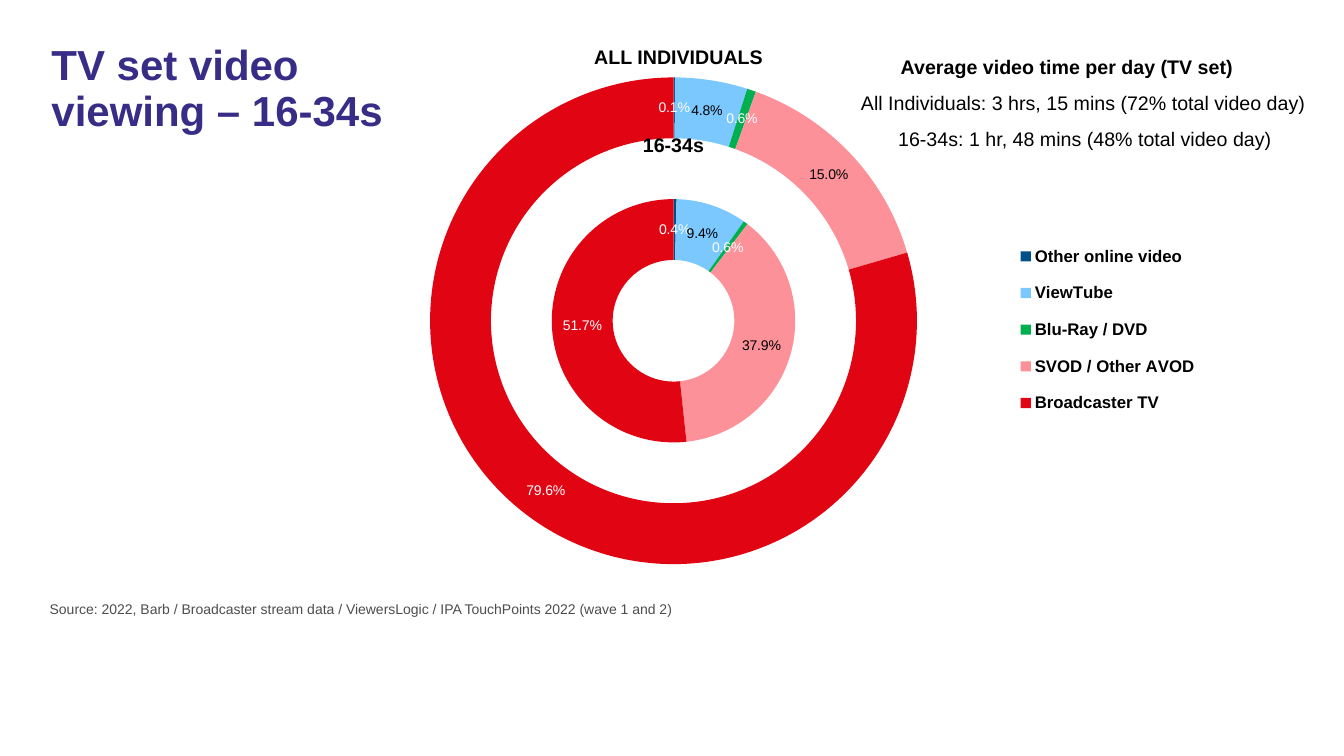
from dataclasses import dataclass
from typing import NamedTuple

from lxml import etree
from pptx import Presentation
from pptx import util as u
from pptx.chart import data as chart_data
from pptx.dml.color import RGBColor
from pptx.enum import chart as charts
from pptx.enum import text
from pptx.oxml import ns

BLACK = RGBColor(0x00, 0x00, 0x00)
WHITE = RGBColor(0xFF, 0xFF, 0xFF)
GREY = RGBColor(0x4D, 0x4D, 0x4D)
PURPLE = RGBColor(0x37, 0x2D, 0x87)
NAVY = RGBColor(0x00, 0x4F, 0x87)
SKY = RGBColor(0x7B, 0xC8, 0xFF)
GREEN = RGBColor(0x00, 0xB0, 0x50)
PINK = RGBColor(0xFD, 0x91, 0x99)
RED = RGBColor(0xE1, 0x05, 0x14)

FONT = "Arial"
VALUE_FORMAT = '0.0"%"'
PAGE_WIDTH = u.Inches(13.33)
PAGE_HEIGHT = u.Inches(7.5)
GRID_STEPS = 100
CAPTION_ROWS = 4.53


class Area(NamedTuple):
    column: float
    row: float
    columns: float
    rows: float

    def lengths(self) -> tuple[int, int, int, int]:
        across, down = PAGE_WIDTH / GRID_STEPS, PAGE_HEIGHT / GRID_STEPS
        return (round(self.column * across), round(self.row * down),
                round(self.columns * across), round(self.rows * down))


class Category(NamedTuple):
    name: str
    fill: RGBColor
    label: RGBColor


class Ring(NamedTuple):
    name: str
    values: tuple


@dataclass
class Caption:
    words: str
    area: Area
    size: float = 14
    bold: bool = False
    color: RGBColor = BLACK
    align: text.PP_ALIGN = text.PP_ALIGN.LEFT
    line_spacing: float = 1.0


CATEGORIES = (
    Category("Other online video", NAVY, WHITE),
    Category("ViewTube", SKY, BLACK),
    Category("Blu-Ray / DVD", GREEN, WHITE),
    Category("SVOD / Other AVOD", PINK, BLACK),
    Category("Broadcaster TV", RED, WHITE),
)
RINGS = (
    Ring("Series 1", (0.4, 9.4, 0.6, 37.9, 51.7)),
    Ring("Series 2", (None,) * len(CATEGORIES)),
    Ring("Series 3", (0.1, 4.8, 0.6, 15, 79.6)),
)
CHART_AREA = Area(24.08, 1.87, 72.02, 81.07)
PLOT_AREA = Area(11, 9.5, 50.3, 81.1)
LEGEND_AREA = Area(71, 35, 20, 33)

TITLE = Caption("TV set video viewing – 16-34s", Area(3.08, 5.2, 28.66, 36.8),
                size=30, bold=True, color=PURPLE, line_spacing=0.9)
CAPTIONS = (
    Caption("All Individuals: 3 hrs, 15 mins (72% total video day)",
            Area(63.32, 11.33, 36.68, CAPTION_ROWS)),
    Caption("16-34s: 1 hr, 48 mins (48% total video day)",
            Area(66.09, 16.07, 31.43, CAPTION_ROWS)),
    Caption("Average video time per day (TV set)",
            Area(66.28, 6.6, 28.66, CAPTION_ROWS), bold=True),
    Caption("ALL INDIVIDUALS", Area(43.25, 5.33, 14.48, CAPTION_ROWS),
            bold=True, align=text.PP_ALIGN.CENTER),
    Caption("16-34s", Area(45.69, 16.87, 8.85, CAPTION_ROWS),
            bold=True, align=text.PP_ALIGN.CENTER),
    Caption("Source: 2022, Barb / Broadcaster stream data / ViewersLogic / "
            "IPA TouchPoints 2022 (wave 1 and 2)",
            Area(2.96, 78.8, 93.02, 4.4), size=10, color=GREY),
)


def apply(target, values: dict) -> None:
    for name, value in values.items():
        setattr(target, name, value)


def format_font(font, size: float, color: RGBColor, bold: bool = False) -> None:
    apply(font, {"name": FONT, "size": u.Pt(size), "bold": bold})
    font.color.rgb = color


def write_caption(box, caption: Caption) -> None:
    left, top, width, height = caption.area.lengths()
    apply(box, {"left": left, "top": top, "width": width, "height": height})
    frame = box.text_frame
    apply(frame, {"word_wrap": True, "auto_size": text.MSO_AUTO_SIZE.NONE,
                  "vertical_anchor": text.MSO_ANCHOR.TOP})
    para = frame.paragraphs[0]
    apply(para, {"alignment": caption.align, "line_spacing": caption.line_spacing})
    span = para.add_run()
    span.text = caption.words
    format_font(span.font, caption.size, caption.color, caption.bold)


def place_manually(element, area: Area, inner: bool = False) -> None:
    for old in element.findall(ns.qn("c:layout")):
        element.remove(old)
    layout = etree.Element(ns.qn("c:layout"))
    manual = etree.SubElement(layout, ns.qn("c:manualLayout"))
    settings = {"layoutTarget": "inner"} if inner else {}
    settings |= {"xMode": "edge", "yMode": "edge"}
    settings |= {side: length / GRID_STEPS for side, length in zip("xywh", area)}
    for tag, value in settings.items():
        etree.SubElement(manual, ns.qn(f"c:{tag}")).set("val", str(value))
    position = element.find(ns.qn("c:legendPos"))
    element.insert(0 if position is None else 1, layout)


def format_ring(series) -> None:
    labels = series.data_labels
    apply(labels, {"show_value": True, "show_percentage": False,
                   "number_format": VALUE_FORMAT,
                   "number_format_is_linked": False})
    format_font(labels.font, 10, WHITE)
    for index, category in enumerate(CATEGORIES):
        point = series.points[index]
        point.format.fill.solid()
        point.format.fill.fore_color.rgb = category.fill
        point.format.line.fill.background()
        format_font(point.data_label.font, 10, category.label)
    for label_element in labels._element.findall(ns.qn("c:dLbl")):
        number_format = etree.Element(ns.qn("c:numFmt"), formatCode=VALUE_FORMAT,
                                      sourceLinked="0")
        label_element.find(ns.qn("c:idx")).addnext(number_format)


def add_rings(page) -> None:
    numbers = chart_data.CategoryChartData(number_format="0.0")
    numbers.categories = [category.name for category in CATEGORIES]
    for ring in RINGS:
        numbers.add_series(ring.name, ring.values)
    chart = page.shapes.add_chart(charts.XL_CHART_TYPE.DOUGHNUT,
                                  *CHART_AREA.lengths(), numbers).chart
    apply(chart, {"has_title": False, "has_legend": True})
    format_font(chart.font, 18, BLACK)
    apply(chart.legend, {"position": charts.XL_LEGEND_POSITION.RIGHT,
                         "include_in_layout": False})
    format_font(chart.legend.font, 12, BLACK, bold=True)
    plot = chart.plots[0]
    plot.vary_by_categories = True
    for series in plot.series:
        format_ring(series)
    root = chart._chartSpace
    root.find(f".//{ns.qn('c:holeSize')}").set("val", "47")
    place_manually(root.find(f".//{ns.qn('c:plotArea')}"), PLOT_AREA, inner=True)
    place_manually(root.find(f".//{ns.qn('c:legend')}"), LEGEND_AREA)


def main() -> None:
    deck = Presentation()
    apply(deck, {"slide_width": PAGE_WIDTH, "slide_height": PAGE_HEIGHT})
    page = deck.slides.add_slide(deck.slide_layouts.get_by_name("Title Only"))
    add_rings(page)
    write_caption(page.shapes.title, TITLE)
    for caption in CAPTIONS:
        write_caption(page.shapes.add_textbox(*caption.area.lengths()), caption)
    deck.save("out.pptx")


if __name__ == "__main__":
    main()
